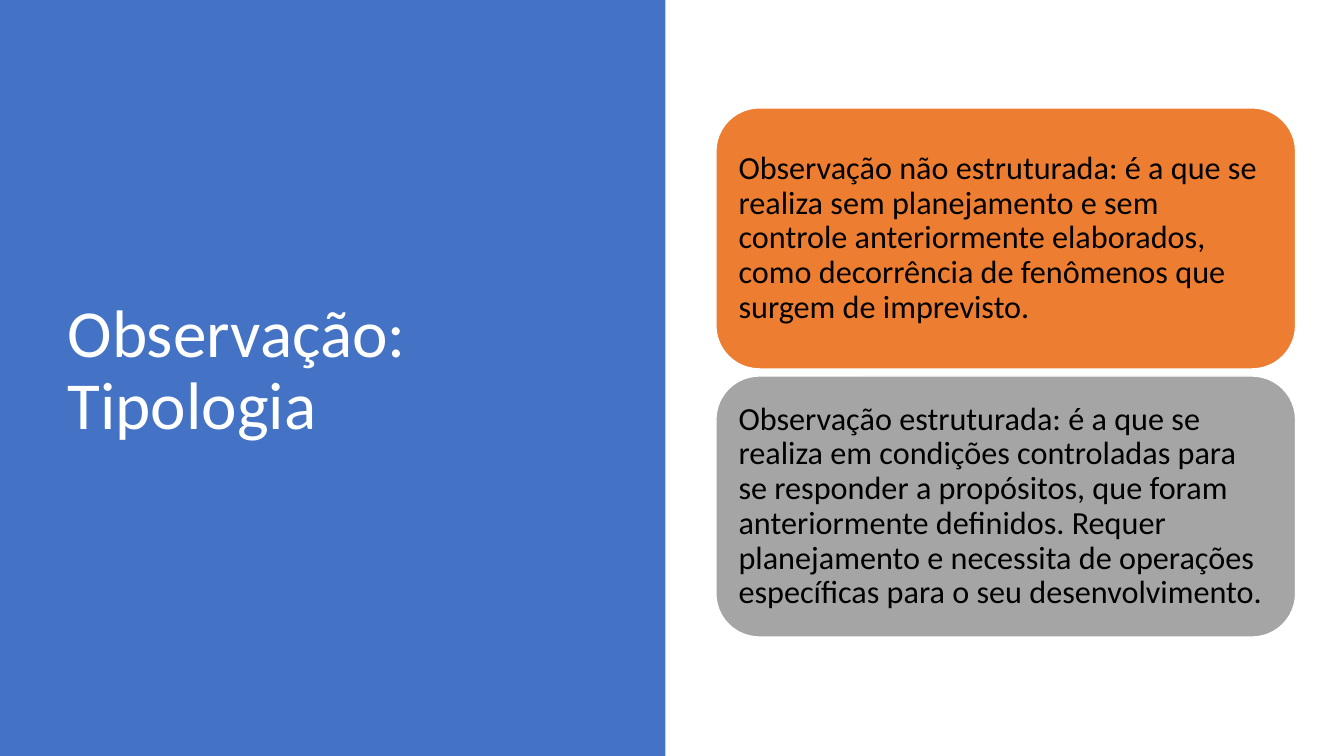
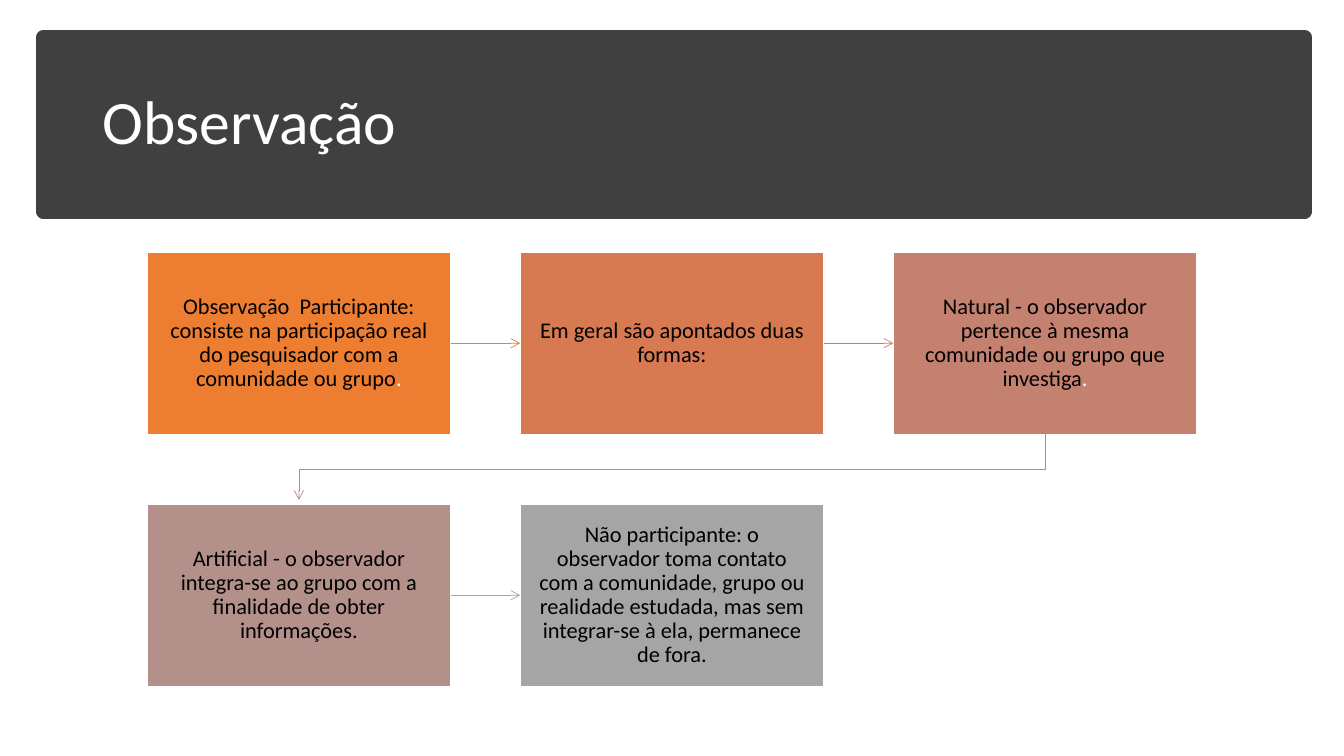
import dataclasses

import pptx
import pptx.dml.color
import pptx.enum.shapes
import pptx.enum.text
import pptx.oxml
import pptx.oxml.ns
import pptx.util

SHAPE = pptx.enum.shapes.MSO_SHAPE
ALIGN = pptx.enum.text.PP_ALIGN
TOP, LEFT, BOTTOM, RIGHT = range(4)


@dataclasses.dataclass(frozen=True)
class Theme:
    """Colours, type sizes and line widths of the deck."""
    font: str = "Calibri"
    white: str = "FFFFFF"
    black: str = "000000"
    blue: str = "4472C4"
    charcoal: str = "404040"
    orange: str = "ED7D31"
    grey: str = "A5A5A5"
    steps: tuple = ("ED7D31", "D87A51", "C48170", "B4908B", "A5A5A5")
    arrows: tuple = ("ED7D31", "D17B5C", "B98A82", "A5A5A5")
    panel_title: int = 48
    band_title: int = 44
    definition: int = 23
    step: int = 16
    outline: float = 1
    arrow: float = 0.5
    band_edge: float = 10


@dataclasses.dataclass(frozen=True)
class Grid:
    """Equal cells placed by column and row, in inches."""
    left: float
    top: float
    width: float
    height: float
    column_step: float
    row_step: float

    def cell(self, column, row):
        """Return left, top, width and height of one cell."""
        return (self.left + column * self.column_step,
                self.top + row * self.row_step, self.width, self.height)


THEME = Theme()
SLIDE_WIDTH, SLIDE_HEIGHT = 13.33, 7.5
DEFINITION_GRID = Grid(7.1, 1.07, 5.75, 2.59, 0, 2.66)
STEP_GRID = Grid(1.46, 2.5, 3.01, 1.81, 3.7, 2.5)
STEP_COLUMNS = 3

DEFINITIONS = (
    (THEME.orange, "Observação não estruturada: é a que se realiza sem planejamento e sem "
     "controle anteriormente elaborados, como decorrência de fenômenos que surgem de imprevisto."),
    (THEME.grey, "Observação estruturada: é a que se realiza em condições controladas para se "
     "responder a propósitos, que foram anteriormente definidos. Requer planejamento e necessita "
     "de operações específicas para o seu desenvolvimento."),
)
STEPS = (
    (("Observação  Participante: consiste na participação real do pesquisador com a "
      "comunidade ou grupo", THEME.black), (".", THEME.white)),
    (("Em geral são apontados duas formas:", THEME.black),),
    (("Natural - o observador pertence à mesma comunidade ou grupo que investiga",
      THEME.black), (".", THEME.white)),
    (("Artificial - o observador integra-se ao grupo com a finalidade de obter "
      "informações.", THEME.black),),
    (("Não participante: o observador toma contato com a comunidade, grupo ou realidade "
      "estudada, mas sem integrar-se à ela, permanece de fora.", THEME.black),),
)


def colour(value):
    """Turn a hex value into a colour."""
    return pptx.dml.color.RGBColor.from_string(value)


def inches(*values):
    """Turn numbers into a list of lengths."""
    return [pptx.util.Inches(value) for value in values]


def apply_format(target, values):
    """Set each named attribute of the target."""
    for name, value in values.items():
        setattr(target, name, value)


def write(shape, runs, size, align, margin):
    """Fill a shape with one paragraph of coloured runs."""
    inset = pptx.util.Inches(margin)
    frame = shape.text_frame
    apply_format(frame, {
        "word_wrap": True,
        "auto_size": pptx.enum.text.MSO_AUTO_SIZE.NONE,
        "vertical_anchor": pptx.enum.text.MSO_ANCHOR.MIDDLE,
        "margin_left": inset, "margin_right": inset,
        "margin_top": inset, "margin_bottom": inset,
    })
    paragraph = frame.paragraphs[0]
    apply_format(paragraph, {"alignment": align, "line_spacing": 0.9})
    for words, ink in runs:
        run = paragraph.add_run()
        run.text = words
        apply_format(run.font, {"name": THEME.font, "size": pptx.util.Pt(size)})
        run.font.color.rgb = colour(ink)


def add_block(slide, kind, box, fill, edge=None, edge_width=0):
    """Draw a filled shape with an optional outline."""
    block = slide.shapes.add_shape(kind, *inches(*box))
    block.shadow.inherit = False
    block.fill.solid()
    block.fill.fore_color.rgb = colour(fill)
    if edge:
        block.line.color.rgb = colour(edge)
        block.line.width = pptx.util.Pt(edge_width)
    else:
        block.line.fill.background()
    return block


def add_title(slide, words, box, size, backdrop):
    """Place the title in front of its backdrop."""
    title = slide.shapes.title
    apply_format(title, dict(zip(("left", "top", "width", "height"), inches(*box))))
    write(title, [(words, THEME.white)], size, ALIGN.LEFT, 0.1)
    title.element.addprevious(backdrop.element)


def style_arrow(arrow, ink):
    """Colour an arrow, point its end and drop its shadow."""
    arrow.line.color.rgb = colour(ink)
    arrow.line.width = pptx.util.Pt(THEME.arrow)
    head = pptx.oxml.parse_xml(
        '<a:tailEnd %s type="arrow"/>' % pptx.oxml.ns.nsdecls("a"))
    arrow.line._get_or_add_ln().append(head)
    if not arrow.element.spPr.findall(pptx.oxml.ns.qn("a:effectLst")):
        arrow.element.spPr.append(
            pptx.oxml.parse_xml("<a:effectLst %s/>" % pptx.oxml.ns.nsdecls("a")))


def link_across(slide, start, end, ink):
    """Join two neighbouring steps in a row."""
    arrow = slide.shapes.add_connector(
        pptx.enum.shapes.MSO_CONNECTOR.STRAIGHT, 0, 0, 0, 0)
    arrow.begin_connect(start, RIGHT)
    arrow.end_connect(end, LEFT)
    style_arrow(arrow, ink)


def link_rows(slide, start, end, ink):
    """Lead from the end of one row to the start of the next."""
    start_x = start.left + start.width // 2
    end_x = end.left + end.width // 2
    start_y = start.top + start.height
    turn_y = (start_y + end.top) // 2
    end_y = end.top - pptx.util.Inches(0.04)
    outline = slide.shapes.build_freeform(start_x, start_y)
    outline.add_line_segments(
        [(start_x, turn_y), (end_x, turn_y), (end_x, end_y)], close=False)
    arrow = outline.convert_to_shape()
    arrow.shadow.inherit = False
    arrow.fill.background()
    style_arrow(arrow, ink)


def build_typology(slide):
    """Build the slide with the two definitions."""
    panel = add_block(slide, SHAPE.RECTANGLE, (0, 0, 6.6, SLIDE_HEIGHT), THEME.blue)
    add_title(slide, "Observação: Tipologia", (0.57, 0.68, 5.67, 6.02),
              THEME.panel_title, panel)
    for row, (fill, words) in enumerate(DEFINITIONS):
        definition = add_block(slide, SHAPE.ROUNDED_RECTANGLE, DEFINITION_GRID.cell(0, row),
                               fill, THEME.white, THEME.outline)
        write(definition, [(words, THEME.black)], THEME.definition, ALIGN.LEFT, 0.1)


def build_flow(slide):
    """Build the slide with the chain of steps."""
    band = add_block(slide, SHAPE.RECTANGLE, (0.43, 0.37, 12.51, 1.73),
                     THEME.charcoal, THEME.charcoal, THEME.band_edge)
    add_title(slide, "Observação", (0.92, 0.51, 11.5, 1.45), THEME.band_title, band)
    steps = []
    for index, (fill, runs) in enumerate(zip(THEME.steps, STEPS)):
        row, column = divmod(index, STEP_COLUMNS)
        step = add_block(slide, SHAPE.RECTANGLE, STEP_GRID.cell(column, row),
                         fill, THEME.white, THEME.outline)
        write(step, runs, THEME.step, ALIGN.CENTER, 0.15)
        steps.append(step)
    for start, end, ink in zip(steps, steps[1:], THEME.arrows):
        link = link_across if start.top == end.top else link_rows
        link(slide, start, end, ink)


def main():
    """Build and save the deck."""
    deck = pptx.Presentation()
    deck.slide_width, deck.slide_height = inches(SLIDE_WIDTH, SLIDE_HEIGHT)
    title_only = deck.slide_layouts[5]
    for build in (build_typology, build_flow):
        build(deck.slides.add_slide(title_only))
    deck.save("out.pptx")


if __name__ == "__main__":
    main()
